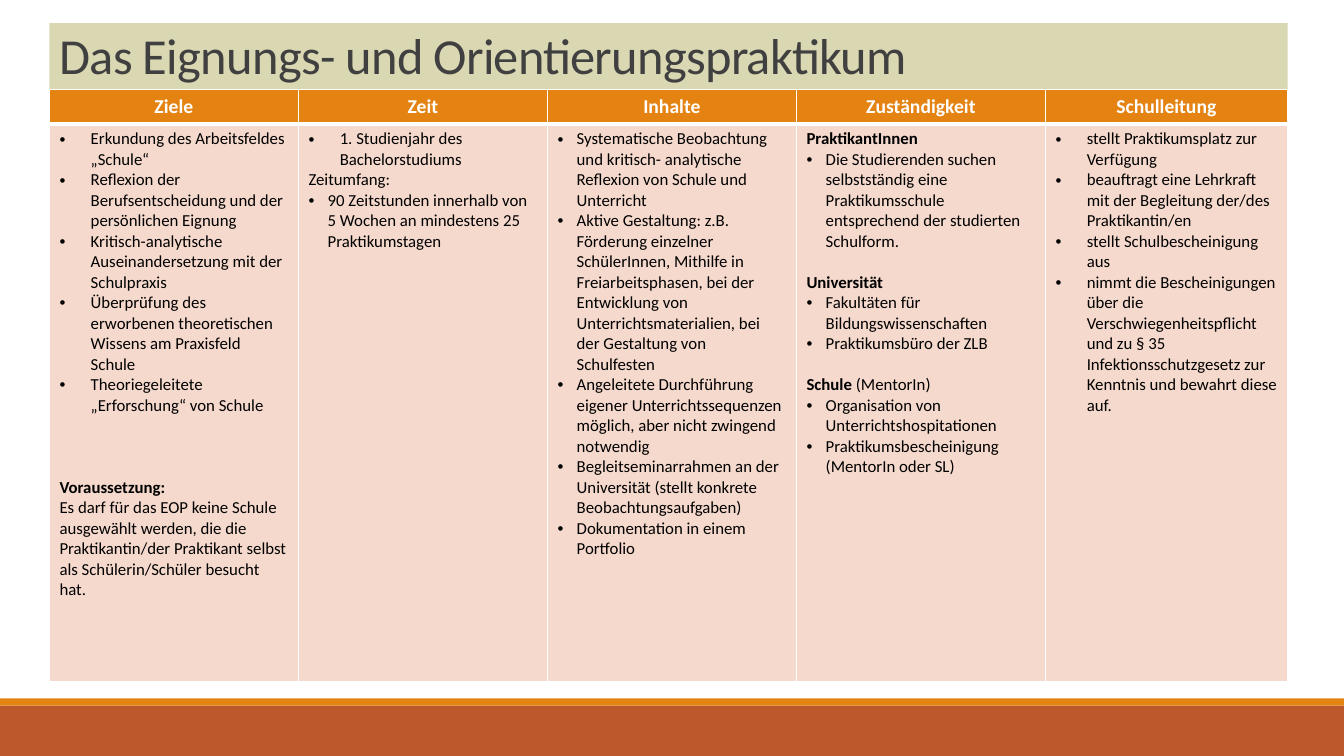
from lxml.etree import SubElement
from pptx import Presentation
from pptx.dml.color import RGBColor
from pptx.enum.shapes import MSO_SHAPE
from pptx.enum.text import MSO_ANCHOR as ANCHOR, MSO_AUTO_SIZE as AUTO, PP_ALIGN as ALIGN
from pptx.oxml import parse_xml
from pptx.oxml.ns import nsdecls, qn
from pptx.util import Inches, Pt

ORANGE, RUST, SAND, PEACH = "E48312", "BD582C", "DAD7B3", "F5D9CC"
WHITE, BLACK, GREY = "FFFFFF", "000000", "404040"
LINE = 14.65  # height of one line of body text in points
WIDE, NARROW = 0.31, 0.19  # bullet indents in inches


def para(*runs, indent=0, before=0):
    """Describe a paragraph; a run is a text or a (text, bold) pair."""
    runs = [r if isinstance(r, tuple) else (r, False) for r in runs]
    return {"runs": runs, "indent": indent, "before": before}


def bullets(indent, *texts):
    return [para(text, indent=indent) for text in texts]


def heading(text, *rest, blank_lines=0):
    return para((text, True), *rest, before=blank_lines * LINE)


COLUMNS = {
    "Ziele": [
        *bullets(
            WIDE,
            "Erkundung des Arbeitsfeldes „Schule“",
            "Reflexion der Berufsentscheidung und der persönlichen Eignung",
            "Kritisch-analytische Auseinandersetzung mit der Schulpraxis",
            "Überprüfung des erworbenen theoretischen Wissens am Praxisfeld Schule",
            "Theoriegeleitete „Erforschung“ von Schule",
        ),
        heading("Voraussetzung:", blank_lines=3),
        para("Es darf für das EOP keine Schule ausgewählt werden, die die "
             "Praktikantin/der Praktikant selbst als Schülerin/Schüler besucht hat."),
    ],
    "Zeit": [
        *bullets(WIDE, "1. Studienjahr des Bachelorstudiums"),
        para("Zeitumfang:"),
        *bullets(NARROW, "90 Zeitstunden innerhalb von 5 Wochen an mindestens 25 "
                 "Praktikumstagen"),
    ],
    "Inhalte": bullets(
        NARROW,
        "Systematische Beobachtung und kritisch- analytische Reflexion von Schule "
        "und Unterricht",
        "Aktive Gestaltung: z.B. Förderung einzelner SchülerInnen, Mithilfe in "
        "Freiarbeitsphasen, bei der Entwicklung von Unterrichtsmaterialien, bei der "
        "Gestaltung von Schulfesten",
        "Angeleitete Durchführung eigener Unterrichtssequenzen möglich, aber nicht "
        "zwingend notwendig",
        "Begleitseminarrahmen an der Universität (stellt konkrete Beobachtungsaufgaben)",
        "Dokumentation in einem Portfolio",
    ),
    "Zuständigkeit": [
        heading("PraktikantInnen"),
        *bullets(NARROW, "Die Studierenden suchen selbstständig eine Praktikumsschule "
                 "entsprechend der studierten Schulform."),
        heading("Universität", blank_lines=1),
        *bullets(NARROW, "Fakultäten für Bildungswissenschaften",
                 "Praktikumsbüro der ZLB"),
        heading("Schule ", "(MentorIn)", blank_lines=1),
        *bullets(NARROW, "Organisation von Unterrichtshospitationen",
                 "Praktikumsbescheinigung (MentorIn oder SL)"),
    ],
    "Schulleitung": bullets(
        WIDE,
        "stellt Praktikumsplatz zur Verfügung",
        "beauftragt eine Lehrkraft mit der Begleitung der/des Praktikantin/en",
        "stellt Schulbescheinigung aus",
        "nimmt die Bescheinigungen über die Verschwiegenheitspflicht und zu § 35 "
        "Infektionsschutzgesetz zur Kenntnis und bewahrt diese auf.",
    ),
}


def paint(target, color):
    target.fill.solid()
    target.fill.fore_color.rgb = RGBColor.from_string(color)


def add_run(p, text, size=12, color=BLACK, bold=False):
    r = p.add_run()
    r.text = text
    r.font.name, r.font.size, r.font.bold = "Calibri", Pt(size), bold
    r.font.color.rgb = RGBColor.from_string(color)
    return r


def set_bullet(p, indent):
    pPr = p._p.get_or_add_pPr()
    pPr.set("marL", str(Inches(indent)))
    pPr.set("indent", str(-Inches(indent)))
    SubElement(pPr, qn("a:buFont")).set("typeface", "Arial")
    SubElement(pPr, qn("a:buChar")).set("char", "•")


def set_borders(cell, **widths):
    """Draw white cell borders; widths in points by side: L, R, T, B."""
    tcPr = cell._tc.get_or_add_tcPr()
    for i, side in enumerate("LRTB"):
        tcPr.insert(i, parse_xml(
            f'<a:ln{side} {nsdecls("a")} w="{Pt(widths.get(side, 1))}"><a:solidFill>'
            f'<a:srgbClr val="{WHITE}"/></a:solidFill></a:ln{side}>'))


class SlideBuilder:
    def __init__(self, prs):
        self.s = prs.slides.add_slide(prs.slide_layouts[5])

    def band(self, top, height, color):
        sp = self.s.shapes.add_shape(MSO_SHAPE.RECTANGLE, 0, Inches(top),
                                     Inches(13.33), Inches(height))
        sp.shadow.inherit = False
        sp.line.fill.background()
        paint(sp, color)

    def title(self, text, left, top, width, height):
        sp = self.s.shapes.title
        sp.left, sp.top, sp.width, sp.height = map(Inches, (left, top, width, height))
        paint(sp, SAND)
        tf = sp.text_frame
        tf.word_wrap, tf.auto_size = True, AUTO.NONE
        tf.vertical_anchor = ANCHOR.BOTTOM
        p = tf.paragraphs[0]
        p.alignment, p.line_spacing = ALIGN.LEFT, 0.85
        add_run(p, text, 36, GREY).font._element.set("spc", "-50")

    def table(self, columns, left, top, widths, heights):
        table = self.s.shapes.add_table(
            2, len(columns), Inches(left), Inches(top),
            Inches(sum(widths)), Inches(sum(heights))).table
        table.horz_banding = False
        for row, height in zip(table.rows, heights):
            row.height = Inches(height)
        for i, (name, paragraphs) in enumerate(columns.items()):
            table.columns[i].width = Inches(widths[i])
            self.header_cell(table.cell(0, i), name)
            self.body_cell(table.cell(1, i), paragraphs)

    def header_cell(self, cell, text):
        paint(cell, ORANGE)
        set_borders(cell, B=3)
        cell.vertical_anchor = ANCHOR.MIDDLE
        p = cell.text_frame.paragraphs[0]
        p.alignment = ALIGN.CENTER
        add_run(p, text, 14, WHITE, True)

    def body_cell(self, cell, paragraphs):
        paint(cell, PEACH)
        set_borders(cell, T=3)
        tf = cell.text_frame
        for i, item in enumerate(paragraphs):
            p = tf.add_paragraph() if i else tf.paragraphs[0]
            if item["before"]:
                p.space_before = Pt(item["before"])
            if item["indent"]:
                set_bullet(p, item["indent"])
            for text, bold in item["runs"]:
                add_run(p, text, bold=bold)


def main():
    prs = Presentation()
    prs.slide_width, prs.slide_height = Inches(13.33), Inches(7.5)
    slide = SlideBuilder(prs)
    slide.band(7, 0.5, RUST)
    slide.band(6.93, 0.07, ORANGE)
    slide.title("Das Eignungs- und Orientierungspraktikum", 0.49, 0.23, 12.28, 0.66)
    slide.table(COLUMNS, 0.49, 0.89, [2.47] * 4 + [2.4], [0.34, 5.53])
    prs.save("out.pptx")


if __name__ == "__main__":
    main()
